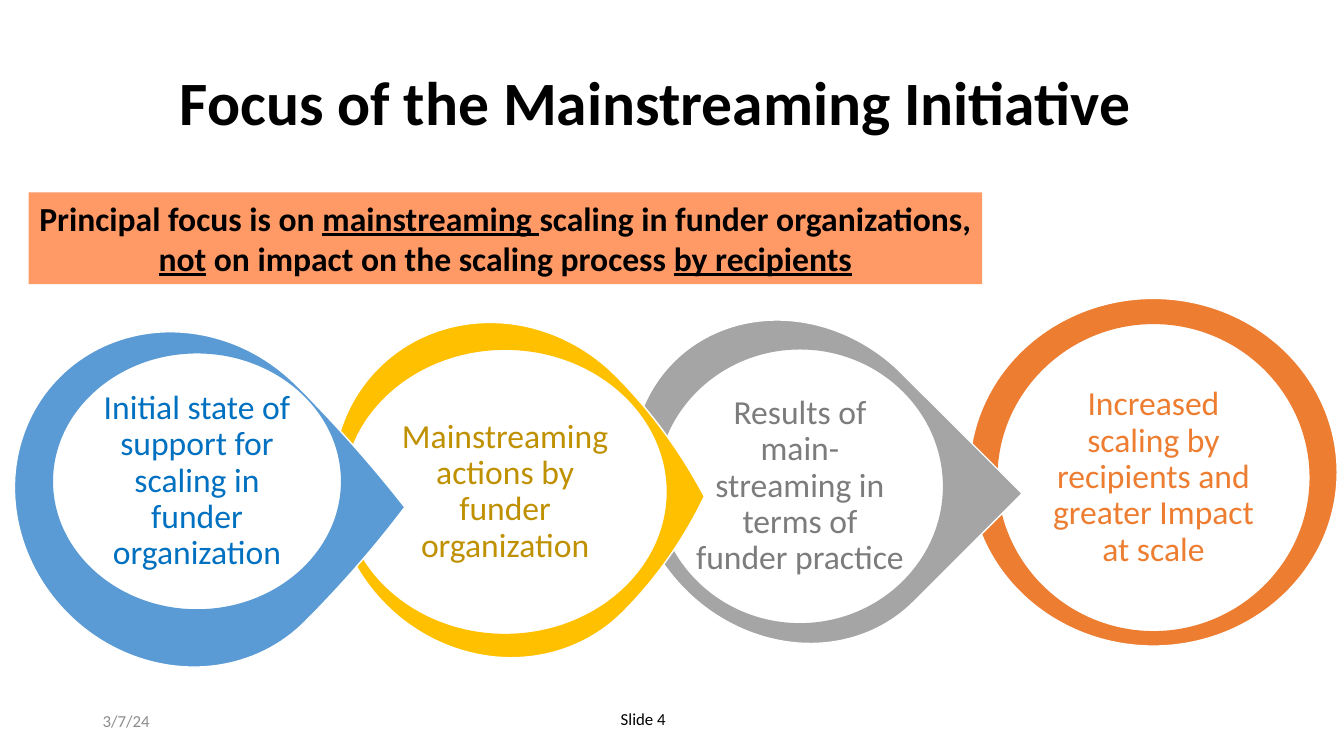
from lxml import etree
from pptx import Presentation
from pptx.dml.color import RGBColor
from pptx.enum import shapes, text
from pptx.oxml.ns import qn
from pptx.util import Cm, Pt

FONT = "Calibri"
CENTER = text.PP_ALIGN.CENTER
TOP, MIDDLE = text.MSO_ANCHOR.TOP, text.MSO_ANCHOR.MIDDLE
ARC = 0.55  # how far a quarter arc's handles reach towards its corner

# Back to front: ring box, teardrop point (None = plain ellipse), ring colour,
# inner disc box, text inset, text colour, text
STAGES = [
    ((24.43, 7.52, 9.27, 8.76), None, "ED7D31", (25.12, 8.15, 7.9, 7.77), 1.07,
     "ED7D31", "Increased scaling by recipients and\ngreater Impact at scale"),
    ((15.72, 8.28, 8.56, 7.72), 1, "A5A5A5", (16.54, 8.79, 7.24, 6.93), 0.98,
     "7C7C7C", "Results of main-\nstreaming in terms of funder practice"),
    ((8.26, 8.26, 8.71, 8.18), 0.86, "FFC000", (8.64, 8.8, 8.18, 7.19), 1.12,
     "BF9000", "Mainstreaming actions by funder organization"),
    ((0.22, 8.51, 8.74, 8.15), 0.94, "5B9BD5", (1.32, 8.89, 7.29, 6.48), 0.99,
     "0070C0", "Initial state of support for scaling in funder organization"),
]

# Each paragraph is a list of (text, underlined)
BANNER = [
    [("Principal focus is on ", False), ("mainstreaming ", True),
     ("scaling in funder organizations, ", False)],
    [("not", True), (" on impact on the scaling process ", False),
     ("by recipients", True)],
]


def rgb(color):
    return RGBColor.from_string(color)


def box(values):
    return [Cm(v) for v in values]


def write(p, content, size=24, color="000000", bold=False, underline=False,
          align=None, spacing=None):
    """Add text to a paragraph; a newline becomes a line break."""
    p.alignment = align
    p.line_spacing = spacing
    for i, line in enumerate(content.split("\n")):
        if i:
            p.add_line_break()
        r = p.add_run()
        r.text = line
        r.font.name, r.font.size = FONT, Pt(size)
        r.font.bold, r.font.underline = bold, underline
        r.font.color.rgb = rgb(color)


def paint(sp, fill, line=None):
    sp.shadow.inherit = False
    sp.fill.solid()
    sp.fill.fore_color.rgb = rgb(fill)
    if line:
        sp.line.color.rgb = rgb(line)
        sp.line.width = Pt(1)
    else:
        sp.line.fill.background()


def add_ring(slide, pos, point, color):
    kind = shapes.MSO_SHAPE.OVAL if point is None else shapes.MSO_SHAPE.TEAR
    sp = slide.shapes.add_shape(kind, *box(pos))
    paint(sp, color, "FFFFFF")
    if point is not None:
        sp.adjustments[0] = point
        sp.rotation = 45


def round_off(sp, corners):
    """Turn each straight side of a diamond into a quarter arc."""
    start = next(sp._element.iter(qn("a:moveTo")))[0]
    sides = list(sp._element.iter(qn("a:lnTo")))
    for side, corner in zip(sides, corners):
        end = side[0]
        side.tag = qn("a:cubicBezTo")
        for i, pt in enumerate((start, end)):
            handle = etree.Element(qn("a:pt"))
            for axis, c in zip("xy", corner):
                v = int(pt.get(axis))
                handle.set(axis, str(round(v + (c - v) * ARC)))
            side.insert(i, handle)
        start = end


def add_disc(slide, pos, inset, line, color, content):
    """Round outline whose text area is its whole bounding box."""
    x, y, w, h = box(pos)
    left, top = (x, y + h // 2), (x + w // 2, y)
    right, bottom = (x + w, y + h // 2), (x + w // 2, y + h)
    builder = slide.shapes.build_freeform(*left)
    builder.add_line_segments([top, right, bottom, left], close=True)
    sp = builder.convert_to_shape()
    round_off(sp, [(0, 0), (w, 0), (w, h), (0, h)])
    paint(sp, "FFFFFF", line)
    tf = sp.text_frame
    tf.word_wrap = True
    tf.vertical_anchor = MIDDLE
    tf.margin_left = tf.margin_right = tf.margin_top = tf.margin_bottom = Cm(inset)
    write(tf.paragraphs[0], content, color=color, align=CENTER, spacing=0.9)


def add_title(slide, content):
    sp = slide.shapes.title
    sp.left, sp.top, sp.width, sp.height = box((2.38, 1.45, 28.3, 2.44))
    tf = sp.text_frame
    tf.auto_size = text.MSO_AUTO_SIZE.NONE
    tf.vertical_anchor = MIDDLE
    write(tf.paragraphs[0], content, size=44, bold=True, align=CENTER, spacing=0.9)


def add_banner(slide):
    sp = slide.shapes.add_shape(shapes.MSO_SHAPE.RECTANGLE, *box((0.72, 4.85, 24.03, 2.31)))
    paint(sp, "FF9966")
    tf = sp.text_frame
    tf.word_wrap = True
    tf.vertical_anchor = TOP
    for i, pieces in enumerate(BANNER):
        p = tf.add_paragraph() if i else tf.paragraphs[0]
        for content, underline in pieces:
            write(p, content, bold=True, underline=underline, align=CENTER)


def add_label(slide, pos, content, anchor, **fmt):
    tf = slide.shapes.add_textbox(*box(pos)).text_frame
    tf.word_wrap = True
    tf.vertical_anchor = anchor
    write(tf.paragraphs[0], content, size=12, **fmt)


def main():
    prs = Presentation()
    prs.slide_width, prs.slide_height = Cm(33.87), Cm(19.05)
    slide = prs.slides.add_slide(prs.slide_layouts[5])

    # Chain of stages
    for ring, point, color, disc, inset, text_color, content in STAGES:
        add_ring(slide, ring, point, color)
        add_disc(slide, disc, inset, color, text_color, content)

    # Heading and key message
    add_title(slide, "Focus of the Mainstreaming Initiative")
    add_banner(slide)

    # Footer
    add_label(slide, (12.4, 17.73, 7.62, 1.02), "Slide 4", TOP, align=CENTER)
    add_label(slide, (2.34, 17.65, 7.62, 1.02), "3/7/24", MIDDLE, color="8C8C8C")

    prs.save("out.pptx")


if __name__ == "__main__":
    main()
